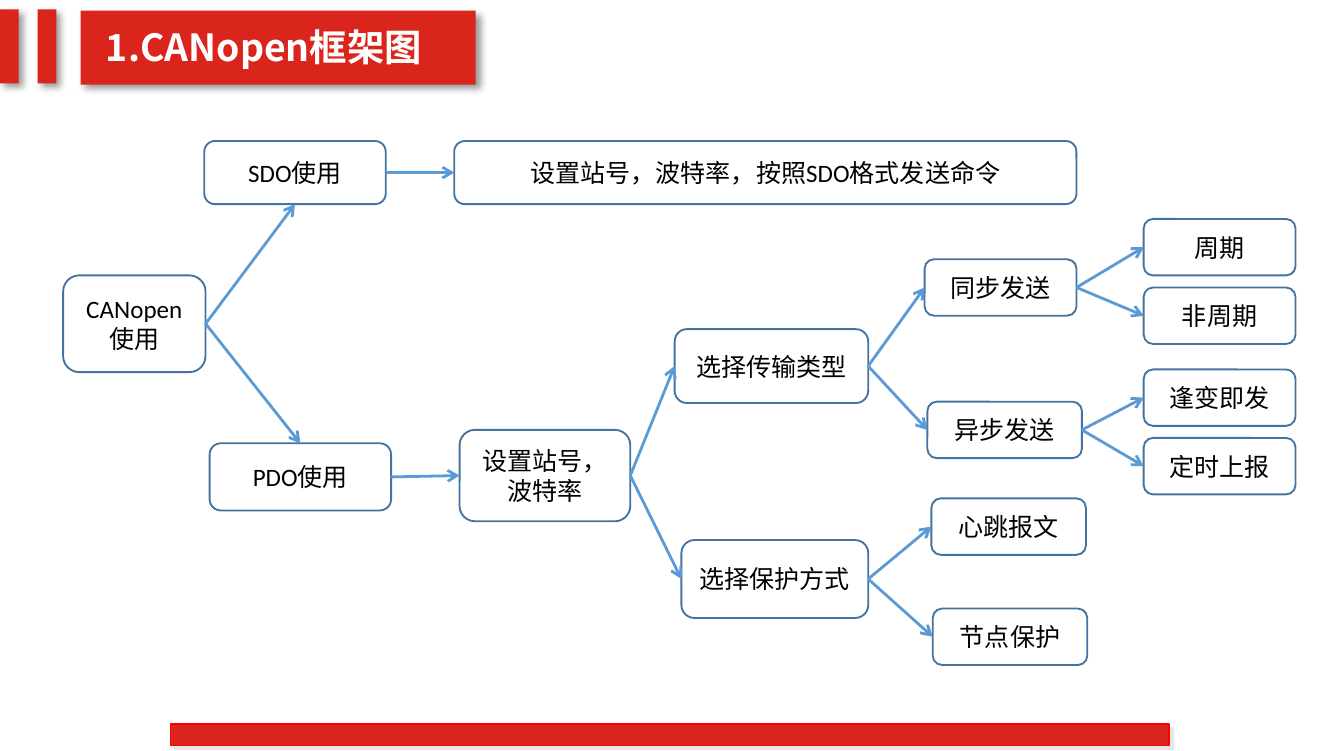
from lxml import etree
from pptx import Presentation
from pptx.dml.color import RGBColor
from pptx.enum.shapes import MSO_CONNECTOR, MSO_SHAPE
from pptx.enum.text import MSO_ANCHOR, MSO_AUTO_SIZE, PP_ALIGN
from pptx.oxml.ns import qn
from pptx.util import Emu, Pt

RECT, ROUNDED = MSO_SHAPE.RECTANGLE, MSO_SHAPE.ROUNDED_RECTANGLE
STRAIGHT = MSO_CONNECTOR.STRAIGHT
TOP, LEFT, BOTTOM, RIGHT = range(4)  # connection sites of a box

PX = 9144  # EMU per px, 100 px to the inch
LATIN, CJK = "Calibri", "Noto Sans CJK SC"
RED, WHITE, BLACK = "DA251C", "FFFFFF", "000000"
OUTLINE, ARROW = "43739E", "5B9BD5"
SOFT_SHADOW = (BLACK, 40, 4, 3)  # colour, opacity %, blur pt, distance pt
HARD_SHADOW = ("E7E6E6", 100, 0, 2.8)

# name: (text, left, top, width, height)
BOXES = {
    "root": ("CANopen使用", 47, 205, 106, 72),
    "sdo": ("SDO使用", 152, 105, 135, 47),
    "pdo": ("PDO使用", 156, 330, 135, 50),
    "sdo_setup": ("设置站号，波特率，按照SDO格式发送命令", 338, 105, 463, 47),
    "pdo_setup": ("设置站号，波特率", 342, 320, 127, 68),
    "transfer": ("选择传输类型", 502, 245, 144, 55),
    "guard": ("选择保护方式", 507, 402, 139, 58),
    "sync": ("同步发送", 688, 193, 113, 42),
    "async": ("异步发送", 690, 299, 115, 42),
    "heartbeat": ("心跳报文", 693, 371, 115, 42),
    "node_guard": ("节点保护", 694, 453, 115, 42),
    "cyclic": ("周期", 851, 163, 113, 42),
    "acyclic": ("非周期", 851, 214, 113, 42),
    "on_change": ("逢变即发", 851, 275, 113, 42),
    "timed": ("定时上报", 851, 326, 113, 42),
}

# parent: children with the side on which the arrow enters
LINKS = {
    "root": {"sdo": BOTTOM, "pdo": TOP},
    "sdo": {"sdo_setup": LEFT},
    "pdo": {"pdo_setup": LEFT},
    "pdo_setup": {"transfer": LEFT, "guard": LEFT},
    "transfer": {"sync": LEFT, "async": LEFT},
    "guard": {"heartbeat": LEFT, "node_guard": LEFT},
    "sync": {"cyclic": LEFT, "acyclic": LEFT},
    "async": {"on_change": LEFT, "timed": LEFT},
}


def px(*lengths):
    return [Emu(length * PX) for length in lengths]


def color(value):
    return RGBColor.from_string(value)


def add_span(para, text, size, font, ink, bold=False):
    span = para.add_run()
    span.text = text
    span.font.size = Pt(size)
    span.font.name = font
    span.font.bold = bold
    span.font.color.rgb = color(ink)
    east_asian = etree.SubElement(span.font._element, qn("a:ea"))
    east_asian.set("typeface", CJK)


def add_panel(slide, kind, place, fill, line=None, weight=1):
    panel = slide.shapes.add_shape(kind, *px(*place))
    panel.shadow.inherit = False
    panel.fill.solid()
    panel.fill.fore_color.rgb = color(fill)
    if line:
        panel.line.color.rgb = color(line)
        panel.line.width = Pt(weight)
    else:
        panel.line.fill.background()
    return panel


def add_shadow(panel, ink, opacity, blur, distance):
    """Cast a shadow to the lower right."""
    effects = panel._element.spPr.find(qn("a:effectLst"))
    shadow = etree.SubElement(
        effects, qn("a:outerShdw"), blurRad=str(Pt(blur)), dist=str(Pt(distance)),
        dir=str(45 * 60000), algn="tl", rotWithShape="0")
    tone = etree.SubElement(shadow, qn("a:srgbClr"), val=ink)
    etree.SubElement(tone, qn("a:alpha"), val=str(opacity * 1000))


def add_title(slide, text):
    for place in [(60, 8, 294, 55), (0, 7, 14, 55), (28, 7, 14, 55)]:
        add_shadow(add_panel(slide, RECT, place, RED), *SOFT_SHADOW)
    box = slide.shapes.add_textbox(*px(69, 13, 295, 44))
    box.text_frame.word_wrap = True
    box.text_frame.auto_size = MSO_AUTO_SIZE.SHAPE_TO_FIT_TEXT
    add_span(box.text_frame.paragraphs[0], text, 20, CJK, WHITE, bold=True)


def add_box(slide, text, *place):
    box = add_panel(slide, ROUNDED, place, WHITE, OUTLINE)
    box.text_frame.word_wrap = True
    box.text_frame.vertical_anchor = MSO_ANCHOR.MIDDLE
    para = box.text_frame.paragraphs[0]
    para.alignment = PP_ALIGN.CENTER
    add_span(para, text, 13.4, LATIN, BLACK)
    return box


def add_arrow(slide, start, end, side):
    """Link the right side of start to the given side of end."""
    arrow = slide.shapes.add_connector(STRAIGHT, 0, 0, 0, 0)
    arrow.begin_connect(start, RIGHT)
    arrow.end_connect(end, side)
    arrow.line.color.rgb = color(ARROW)
    arrow.line.width = Pt(1.5)
    properties = arrow._element.spPr
    etree.SubElement(properties.find(qn("a:ln")), qn("a:tailEnd"), type="arrow")
    etree.SubElement(properties, qn("a:effectLst"))


def main():
    deck = Presentation()
    deck.slide_width, deck.slide_height = px(1000, 559)
    slide = deck.slides.add_slide(deck.slide_layouts[6])

    add_title(slide, "1.CANopen框架图")
    footer = add_panel(slide, RECT, (127, 539, 743, 16), RED, "FF0000", 0.75)
    add_shadow(footer, *HARD_SHADOW)

    boxes = {name: add_box(slide, *content) for name, content in BOXES.items()}
    for parent, children in LINKS.items():
        for child, side in children.items():
            add_arrow(slide, boxes[parent], boxes[child], side)

    deck.save("out.pptx")


if __name__ == "__main__":
    main()
